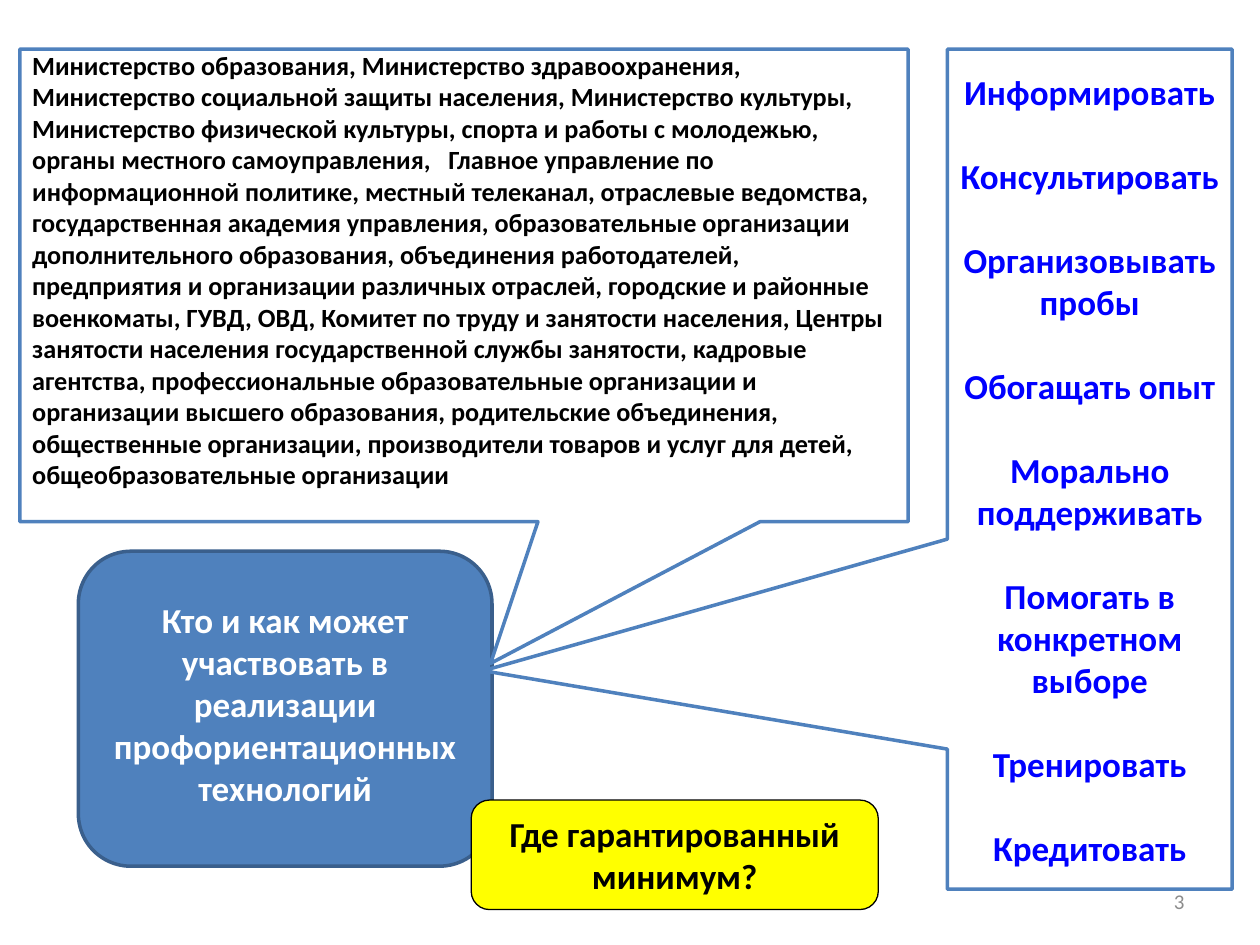
from pptx import Presentation
from pptx.dml.color import RGBColor
from pptx.enum.shapes import MSO_SHAPE as Shape
from pptx.enum.text import MSO_ANCHOR as Anchor, PP_ALIGN as Align
from pptx.util import Pt

BLUE, DARK_BLUE, TEXT_BLUE = "4F81BD", "3A5F8C", "0000FF"
WHITE, BLACK, YELLOW, GREY = "FFFFFF", "000000", "FFFF00", "8C8C8C"

PARTICIPANTS = [
    "Министерство образования, Министерство здравоохранения, Министерство "
    "социальной защиты населения, Министерство культуры,",
    "Министерство физической культуры, спорта и работы с молодежью, органы "
    "местного самоуправления,   Главное управление по информационной политике, "
    "местный телеканал, отраслевые ведомства, государственная академия "
    "управления, образовательные организации дополнительного образования, "
    "объединения работодателей, предприятия и организации различных отраслей, "
    "городские и районные военкоматы, ГУВД, ОВД, Комитет по труду и занятости "
    "населения, Центры занятости населения государственной службы занятости, "
    "кадровые агентства, профессиональные образовательные организации и "
    "организации высшего образования, родительские объединения, общественные "
    "организации, производители товаров и услуг для детей, "
    "общеобразовательные организации",
]
# A vertical tab is a line break within one item
ACTIONS = [
    "Информировать", "Консультировать", "Организовывать пробы", "Обогащать опыт",
    "Морально\vподдерживать", "Помогать в\vконкретном выборе",
    "Тренировать", "Кредитовать",
]
QUESTION = ["Кто и как может участвовать в", "реализации",
            "профориентационных", "технологий"]


def color(value):
    return RGBColor.from_string(value)


def write_text(shape, paragraphs, size=20, ink=BLACK, bold=True, align=Align.CENTER,
               anchor=Anchor.MIDDLE, gap=0, top=3.6, bottom=3.6):
    frame = shape.text_frame
    frame.word_wrap = True
    frame.vertical_anchor = anchor
    frame.margin_top, frame.margin_bottom = Pt(top), Pt(bottom)
    for index, text in enumerate(paragraphs):
        paragraph = frame.paragraphs[0] if index == 0 else frame.add_paragraph()
        paragraph.text = text
        paragraph.alignment = align
        paragraph.space_before = Pt(gap if index else 0)
        for run in paragraph.runs:
            font = run.font
            font.name, font.size, font.bold = "Calibri", Pt(size), bold
            font.color.rgb = color(ink)


def add_box(slide, kind, box, fill, line, width=2, adjustments=()):
    shape = slide.shapes.add_shape(kind, *map(Pt, box))
    shape.shadow.inherit = False
    shape.fill.solid()
    shape.fill.fore_color.rgb = color(fill)
    shape.line.color.rgb = color(line)
    shape.line.width = Pt(width)
    for index, value in enumerate(adjustments):
        shape.adjustments[index] = value
    return shape


def add_callout(slide, box, pointer):
    return add_box(slide, Shape.RECTANGULAR_CALLOUT, box, WHITE, BLUE,
                   adjustments=pointer)


def main():
    presentation = Presentation()
    presentation.slide_width, presentation.slide_height = Pt(720), Pt(540)
    slide = presentation.slides.add_slide(presentation.slide_layouts[6])

    # Central question
    question = add_box(slide, Shape.ROUNDED_RECTANGLE, (44.8, 315, 236.4, 180),
                       BLUE, DARK_BLUE)
    write_text(question, QUESTION, ink=WHITE, bottom=9.4)

    # Who can take part
    participants = add_callout(slide, (11.3, 28.1, 507.6, 270), (0.03, 0.8))
    write_text(participants, PARTICIPANTS, size=15, align=Align.LEFT,
               anchor=Anchor.TOP, top=0)

    # Slide number
    number = slide.shapes.add_textbox(Pt(516), Pt(500.5), Pt(168), Pt(28.75))
    write_text(number, ["3"], size=12, ink=GREY, bold=False, align=Align.RIGHT)

    # How they can take part
    actions = add_callout(slide, (541.4, 28.1, 162.7, 480), (-2.13, 0.24))
    write_text(actions, ACTIONS, ink=TEXT_BLUE, gap=24)

    # Closing question
    minimum = add_box(slide, Shape.ROUNDED_RECTANGLE, (269.3, 457.2, 232.6, 62.6),
                      YELLOW, BLACK, width=0.75)
    write_text(minimum, ["Где гарантированный минимум?"])

    presentation.save("out.pptx")


if __name__ == "__main__":
    main()
